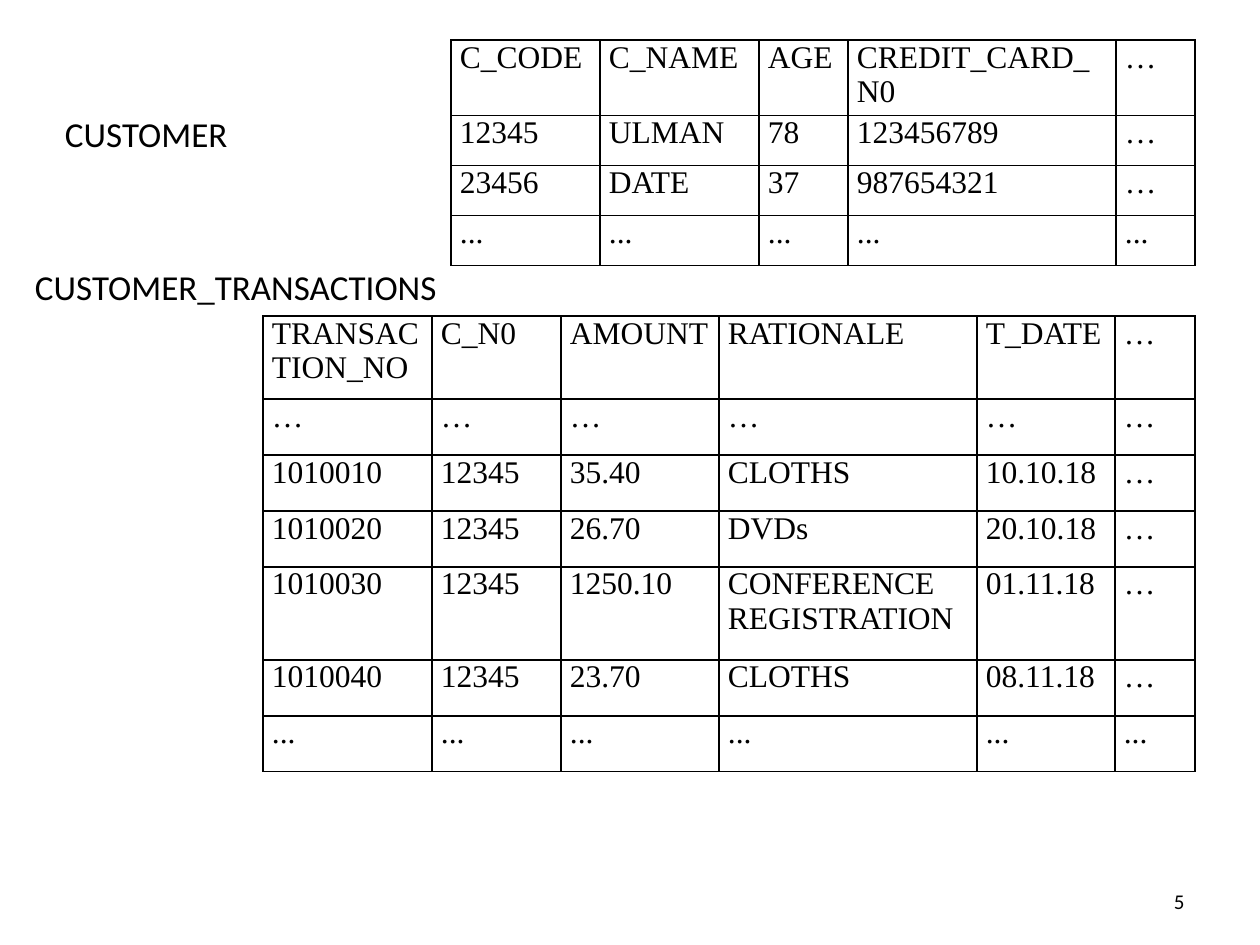
from pptx import Presentation
from pptx.dml.color import RGBColor
from pptx.enum.text import MSO_ANCHOR as Anchor, PP_ALIGN as Align
from pptx.oxml import parse_xml
from pptx.oxml.ns import nsdecls
from pptx.util import Pt

PX = 914400 / 126
BLACK = "000000"

# Content: positions and sizes in px
TABLES = [
    dict(
        at=(263, 316),
        cols=[169, 129, 158, 258, 138, 80],
        heights=[83, 56, 56, 56, 93, 56, 56],
        rows=[
            ["TRANSACTION_NO", "C_N0", "AMOUNT", "RATIONALE", "T_DATE", "…"],
            ["…"] * 6,
            ["1010010", "12345", "35.40", "CLOTHS", "10.10.18", "…"],
            ["1010020", "12345", "26.70", "DVDs", "20.10.18", "…"],
            ["1010030", "12345", "1250.10", "CONFERENCE REGISTRATION", "01.11.18", "…"],
            ["1010040", "12345", "23.70", "CLOTHS", "08.11.18", "…"],
            ["..."] * 6,
        ],
    ),
    dict(
        at=(451, 40),
        cols=[149, 159, 89, 268, 79],
        heights=[75, 50, 50, 50],
        rows=[
            ["C_CODE", "C_NAME", "AGE", "CREDIT_CARD_N0", "…"],
            ["12345", "ULMAN", "78", "123456789", "…"],
            ["23456", "DATE", "37", "987654321", "…"],
            ["..."] * 5,
        ],
    ),
]
# text, box, left inset, size, alignment
LABELS = [
    ("5", (903, 876, 294, 50), 13, 12, Align.RIGHT),
    ("CUSTOMER", (35, 106, 238, 55), 30, 20, Align.LEFT),
    ("CUSTOMER_TRANSACTIONS", (5, 259, 466, 55), 30, 20, Align.LEFT),
]


def px(length):
    return round(length * PX)


def color(value):
    return RGBColor.from_string(value)


def style(frame, font, size, align):
    for paragraph in frame.paragraphs:
        paragraph.alignment = align
        for run in paragraph.runs:
            run.font.name = font
            run.font.size = Pt(size)
            run.font.color.rgb = color(BLACK)


def add_borders(cell):
    properties = cell._tc.get_or_add_tcPr()
    for position, side in enumerate(("lnL", "lnR", "lnT", "lnB")):
        properties.insert(position, parse_xml(
            f'<a:{side} {nsdecls("a")} w="{Pt(1)}"><a:solidFill>'
            f'<a:srgbClr val="{BLACK}"/></a:solidFill></a:{side}>'))


def add_label(slide, text, box, inset, size, align):
    frame = slide.shapes.add_textbox(*map(px, box)).text_frame
    frame.word_wrap = True
    frame.vertical_anchor = Anchor.MIDDLE
    frame.margin_left = px(inset)
    frame.text = text
    style(frame, "Calibri", size, align)


def add_grid(slide, at, cols, heights, rows):
    box = (*at, sum(cols), sum(heights))
    table = slide.shapes.add_table(len(rows), len(cols), *map(px, box)).table
    table.first_row = table.horz_banding = False
    for column, width in zip(table.columns, cols):
        column.width = px(width)
    for row, height, values in zip(table.rows, heights, rows):
        row.height = px(height)
        for cell, value in zip(row.cells, values):
            cell.text = value
            cell.margin_left = cell.margin_right = px(9)
            cell.margin_top = cell.margin_bottom = 0
            cell.fill.background()
            add_borders(cell)
            style(cell.text_frame, "Times New Roman", 18, Align.JUSTIFY)


def main():
    deck = Presentation()
    deck.slide_width, deck.slide_height = px(1260), px(945)
    slide = deck.slides.add_slide(deck.slide_layouts[6])
    # Page number and table names
    for label in LABELS:
        add_label(slide, *label)
    # Relations
    for relation in TABLES:
        add_grid(slide, **relation)
    deck.save("out.pptx")


if __name__ == "__main__":
    main()
